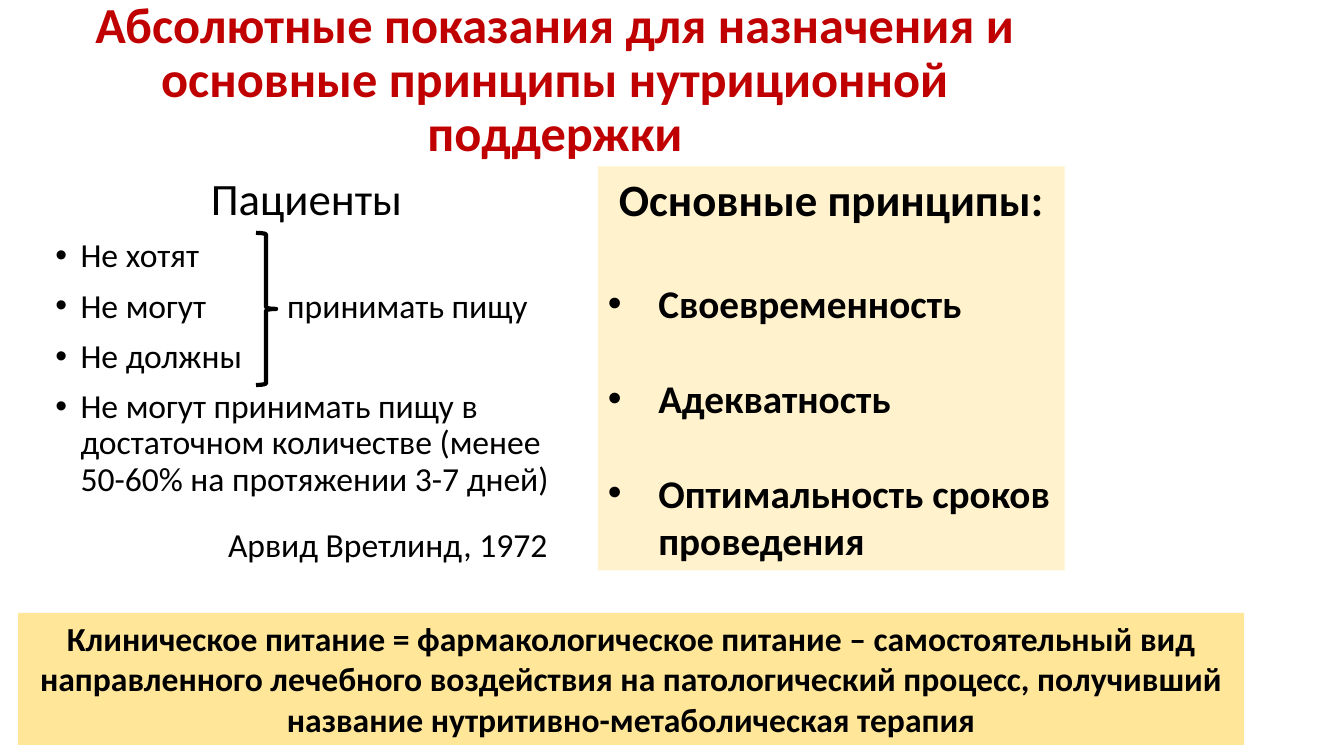
from dataclasses import dataclass

from lxml.etree import SubElement
from pptx import Presentation
from pptx.dml.color import RGBColor
from pptx.enum.shapes import MSO_SHAPE
from pptx.enum.text import MSO_ANCHOR, MSO_AUTO_SIZE, PP_ALIGN
from pptx.oxml.ns import qn
from pptx.shapes.autoshape import Shape
from pptx.slide import Slide
from pptx.text.text import TextFrame
from pptx.util import Emu, Inches, Pt

SLIDE_WIDTH, SLIDE_HEIGHT = Inches(13.33), Inches(7.5)


@dataclass(frozen=True)
class Theme:
    font: str = "Calibri"
    heading: str = "C00000"
    ink: str = "000000"
    pale: str = "FFF2CC"
    gold: str = "FFE699"
    title_size: int = 36
    subtitle_size: int = 32
    principle_size: int = 28
    text_size: int = 24
    brace_width: int = 3


THEME = Theme()


@dataclass(frozen=True)
class Area:
    """A rectangle in percent of the slide's width and height."""
    left: float
    top: float
    width: float
    height: float

    def bounds(self) -> tuple[Emu, Emu, Emu, Emu]:
        return (Emu(round(SLIDE_WIDTH * self.left / 100)),
                Emu(round(SLIDE_HEIGHT * self.top / 100)),
                Emu(round(SLIDE_WIDTH * self.width / 100)),
                Emu(round(SLIDE_HEIGHT * self.height / 100)))


@dataclass(frozen=True)
class Line:
    text: str
    size: int = THEME.text_size
    bold: bool = False
    color: str = THEME.ink
    align: PP_ALIGN = PP_ALIGN.LEFT
    spacing: float = 1.0
    before: int = 0
    bullet_indent: float = 0
    tab: float = 0


@dataclass(frozen=True)
class Block:
    area: Area
    lines: list[Line]
    fill: str | None = None


def patient(text: str, tab: float = 0) -> Line:
    return Line(text, spacing=0.9, before=10, bullet_indent=0.25, tab=tab)


def principle(text: str, before: int = 34) -> Line:
    return Line(text, THEME.principle_size, bold=True, before=before, bullet_indent=0.5)


TITLE = Block(Area(2.18, 1.07, 78.24, 19.33), [
    Line("Абсолютные показания для назначения и основные принципы нутриционной поддержки",
         THEME.title_size, True, THEME.heading, PP_ALIGN.CENTER, 0.9)])
BRACE = Area(19.05, 30.8, 1.5, 20.13)
BLOCKS = [
    Block(Area(3.38, 22.67, 38.86, 57.87), [
        Line("Пациенты", THEME.subtitle_size, align=PP_ALIGN.CENTER, spacing=0.9),
        patient("Не хотят"),
        patient("Не могут\tпринимать пищу", tab=2.3),
        patient("Не должны"),
        patient("Не могут принимать пищу в достаточном количестве "
                "(менее 50-60% на протяжении 3-7 дней)")]),
    Block(Area(11.93, 68.67, 29.56, 6.67), [
        Line("Арвид Вретлинд, 1972", align=PP_ALIGN.RIGHT)]),
    Block(Area(44.49, 22, 34.73, 53.47), [
        Line("Основные принципы:", THEME.subtitle_size, True, align=PP_ALIGN.CENTER),
        principle("Своевременность", before=39),
        principle("Адекватность"),
        principle("Оптимальность сроков проведения")], THEME.pale),
    Block(Area(1.35, 81.07, 91.22, 17.47), [
        Line("Клиническое питание = фармакологическое питание – самостоятельный вид "
             "направленного лечебного воздействия на патологический процесс, получивший "
             "название нутритивно-метаболическая терапия",
             bold=True, align=PP_ALIGN.CENTER)], THEME.gold),
]


def write_lines(frame: TextFrame, lines: list[Line], anchor: MSO_ANCHOR) -> None:
    frame.word_wrap = True
    frame.auto_size = MSO_AUTO_SIZE.NONE
    frame.vertical_anchor = anchor
    for index, line in enumerate(lines):
        para = frame.add_paragraph() if index else frame.paragraphs[0]
        para.alignment = line.align
        para.line_spacing = line.spacing
        para.space_before = Pt(line.before)
        properties = para._p.get_or_add_pPr()
        if line.bullet_indent:
            indent = Inches(line.bullet_indent)
            properties.set("marL", str(indent))
            properties.set("indent", str(-indent))
            SubElement(properties, qn("a:buFont"), typeface="Arial")
            SubElement(properties, qn("a:buChar"), char="•")
        if line.tab:
            tabs = SubElement(properties, qn("a:tabLst"))
            SubElement(tabs, qn("a:tab"), pos=str(Inches(line.tab)), algn="l")
        span = para.add_run()
        span.text = line.text
        span.font.name = THEME.font
        span.font.size = Pt(line.size)
        span.font.bold = line.bold
        span.font.color.rgb = RGBColor.from_string(line.color)


def add_title(slide: Slide) -> None:
    title = slide.shapes.title
    title.left, title.top, title.width, title.height = TITLE.area.bounds()
    write_lines(title.text_frame, TITLE.lines, MSO_ANCHOR.MIDDLE)


def add_block(slide: Slide, block: Block) -> Shape:
    if block.fill:
        box = slide.shapes.add_shape(MSO_SHAPE.RECTANGLE, *block.area.bounds())
        box.shadow.inherit = False
        box.fill.solid()
        box.fill.fore_color.rgb = RGBColor.from_string(block.fill)
        box.line.fill.background()
    else:
        box = slide.shapes.add_textbox(*block.area.bounds())
    write_lines(box.text_frame, block.lines, MSO_ANCHOR.TOP)
    return box


def add_brace(slide: Slide) -> None:
    brace = slide.shapes.add_shape(MSO_SHAPE.RIGHT_BRACE, *BRACE.bounds())
    brace.shadow.inherit = False
    brace.fill.background()
    brace.line.color.rgb = RGBColor.from_string(THEME.ink)
    brace.line.width = Pt(THEME.brace_width)


def main() -> None:
    deck = Presentation()
    deck.slide_width, deck.slide_height = SLIDE_WIDTH, SLIDE_HEIGHT
    slide = deck.slides.add_slide(deck.slide_layouts.get_by_name("Title Only"))
    add_title(slide)
    for block in BLOCKS:
        add_block(slide, block)
    add_brace(slide)
    deck.save("out.pptx")


if __name__ == "__main__":
    main()
